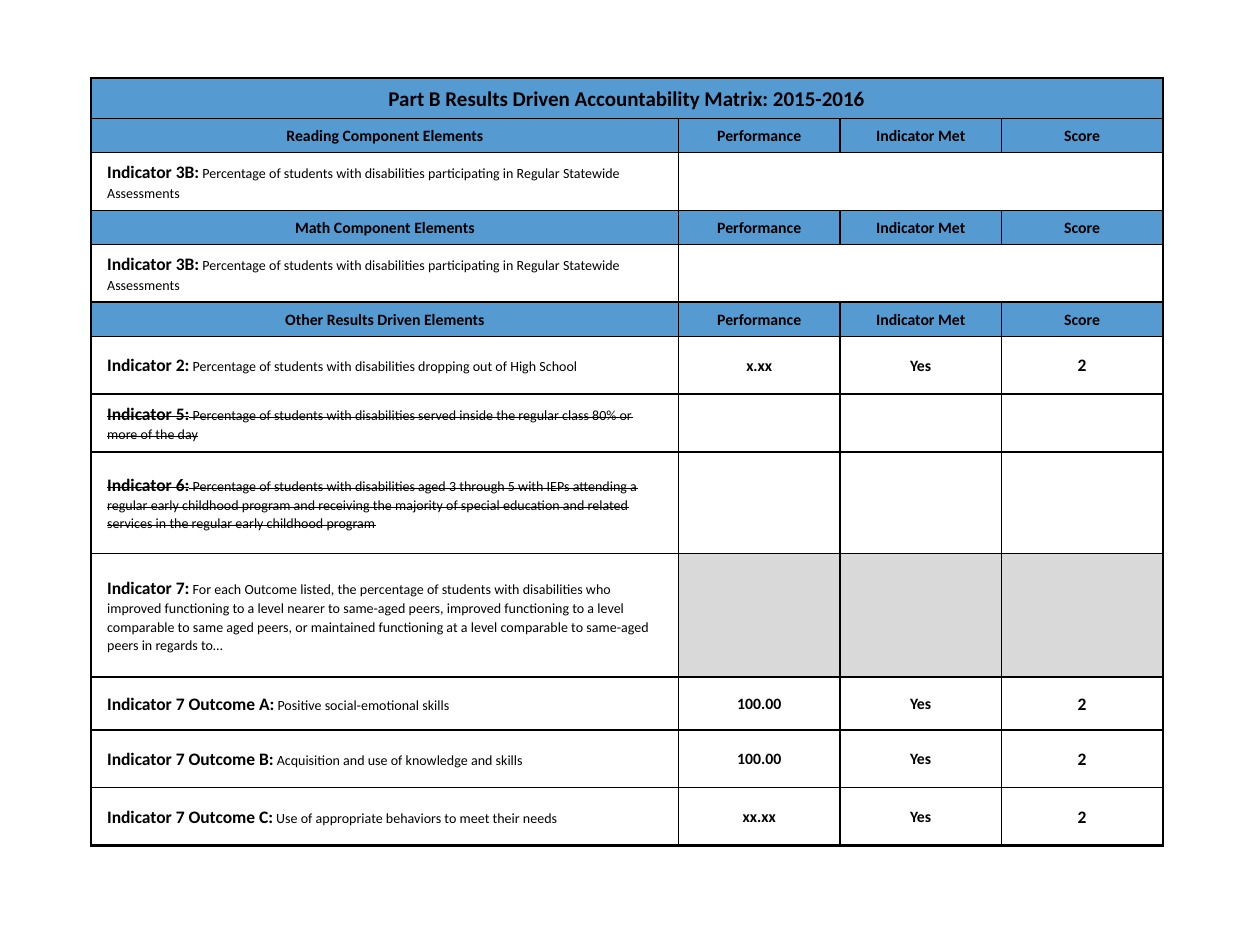
from lxml.etree import SubElement
from pptx import Presentation
from pptx.dml.color import RGBColor
from pptx.enum.text import MSO_ANCHOR, PP_ALIGN
from pptx.oxml import parse_xml
from pptx.oxml.ns import nsdecls
from pptx.util import Pt

BLUE = RGBColor(0x56, 0x9A, 0xD2)
GREY = RGBColor(0xD9, 0xD9, 0xD9)
WHITE = RGBColor(0xFF, 0xFF, 0xFF)
BLACK = RGBColor(0, 0, 0)

TITLE = "Part B Results Driven Accountability Matrix: 2015-2016"
MEASURES = ["Performance", "Indicator Met", "Score"]
PARTICIPATION = "Percentage of students with disabilities participating in Regular Statewide Assessments"

ROWS = [
    ("title", 23, TITLE, "", []),
    ("header", 19.5, "Reading Component Elements", "", MEASURES),
    ("open", 33, "Indicator 3B:", PARTICIPATION, []),
    ("header", 19.5, "Math Component Elements", "", MEASURES),
    ("open", 33, "Indicator 3B:", PARTICIPATION, []),
    ("header", 19.5, "Other Results Driven Elements", "", MEASURES),
    ("scored", 33, "Indicator 2:",
     "Percentage of students with disabilities dropping out of High School",
     ["x.xx", "Yes", "2"]),
    ("struck", 33, "Indicator 5:",
     "Percentage of students with disabilities served inside the regular class 80% or more of the day", []),
    ("struck", 58.25, "Indicator 6:",
     "Percentage of students with disabilities aged 3 through 5 with IEPs attending a regular early "
     "childhood program and receiving the majority of special education and related services in the "
     "regular early childhood program", []),
    ("greyed", 70.5, "Indicator 7:",
     "For each Outcome listed, the percentage of students with disabilities who improved functioning "
     "to a level nearer to same-aged peers, improved functioning to a level comparable to same aged "
     "peers, or maintained functioning at a level comparable to same-aged peers in regards to…", []),
    ("scored", 30.25, "Indicator 7 Outcome A:", "Positive social-emotional skills", ["100.00", "Yes", "2"]),
    ("scored", 33, "Indicator 7 Outcome B:", "Acquisition and use of knowledge and skills", ["100.00", "Yes", "2"]),
    ("scored", 33, "Indicator 7 Outcome C:", "Use of appropriate behaviors to meet their needs", ["xx.xx", "Yes", "2"]),
]
COLUMNS = [335.75, 92.25, 92.25, 92.25]
LEFT, TOP = 52, 44.75
INNER, OUTER = 1, 1.5


def draw_borders(cell, row, column):
    at_edge = {
        "lnL": column == 0 or row == 0,
        "lnR": column == len(COLUMNS) - 1 or row == 0,
        "lnT": row == 0,
        "lnB": row == len(ROWS) - 1,
    }
    properties = cell._tc.get_or_add_tcPr()
    for position, (side, outer) in enumerate(at_edge.items()):
        width = Pt(OUTER if outer else INNER)
        properties.insert(position, parse_xml(
            f'<a:{side} {nsdecls("a")} w="{width}"><a:solidFill>'
            f'<a:srgbClr val="{BLACK}"/></a:solidFill></a:{side}>'))


def write_cell(cell, spans, align, side_margin, edge_margin, struck=False):
    cell.vertical_anchor = MSO_ANCHOR.MIDDLE
    cell.margin_left = cell.margin_right = Pt(side_margin)
    cell.margin_top = cell.margin_bottom = Pt(edge_margin)
    para = cell.text_frame.paragraphs[0]
    para.alignment = align
    para.line_spacing = 1.07
    para.font.name = "Calibri"
    para.font.color.rgb = BLACK
    for text, size, bold in spans:
        span = para.add_run()
        span.text = text
        span.font.size = Pt(size)
        span.font.bold = bold
        if struck:
            span._r.get_or_add_rPr().set("strike", "sngStrike")


deck = Presentation()
deck.slide_width, deck.slide_height = Pt(720), Pt(540)
page = deck.slides.add_slide(deck.slide_layouts[6])
frame = page.shapes.add_table(len(ROWS), len(COLUMNS), Pt(LEFT), Pt(TOP),
                              Pt(sum(COLUMNS)), Pt(sum(row[1] for row in ROWS)))
matrix = frame.table
matrix.first_row = matrix.horz_banding = False
for column, width in zip(matrix.columns, COLUMNS):
    column.width = Pt(width)

for row, (kind, height, label, description, values) in enumerate(ROWS):
    matrix.rows[row].height = Pt(height)
    heading = kind in ("title", "header")
    for column in range(len(COLUMNS)):
        cell = matrix.cell(row, column)
        draw_borders(cell, row, column)
        cell.fill.solid()
        greyed = kind == "greyed" and column > 0
        cell.fill.fore_color.rgb = BLUE if heading else GREY if greyed else WHITE
        cell.text_frame.paragraphs[0].font.size = Pt(9)

    if heading:
        size = 12 if kind == "title" else 9
        write_cell(matrix.cell(row, 0), [(label, size, True)], PP_ALIGN.CENTER, 0, 0)
    else:
        spans = [(label, 10, True), (" ", 8, True), (description, 8, False)]
        write_cell(matrix.cell(row, 0), spans, PP_ALIGN.LEFT, 9.25, 2.25, kind == "struck")
    for column, value in enumerate(values, 1):
        size = 10 if kind == "scored" and column == 3 else 9
        write_cell(matrix.cell(row, column), [(value, size, True)], PP_ALIGN.CENTER, 0, 0)

    if kind in ("title", "open"):
        first = 0 if kind == "title" else 1
        matrix.cell(row, first).merge(matrix.cell(row, len(COLUMNS) - 1))

deck.save("out.pptx")
